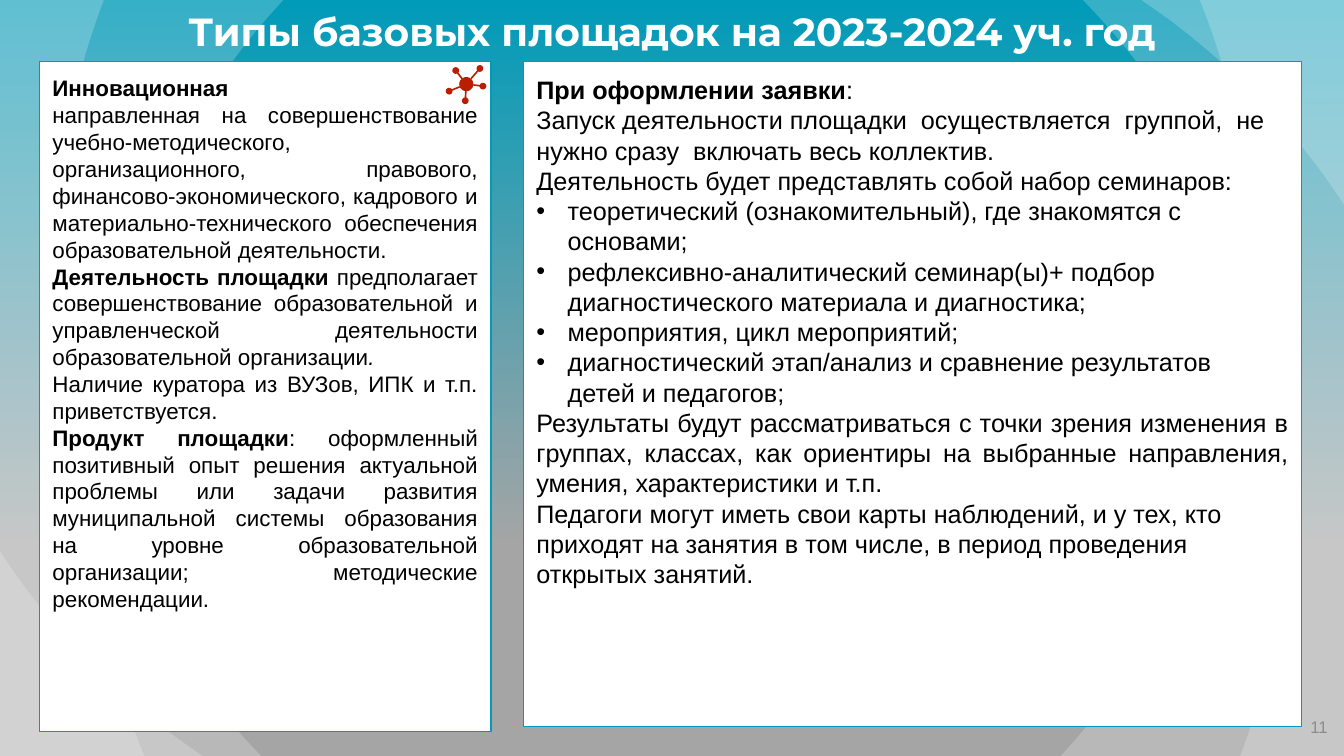
import math

import pptx
import pptx.dml.color
import pptx.enum.shapes
import pptx.enum.text
import pptx.oxml
import pptx.oxml.ns
import pptx.util

Inches = pptx.util.Inches
Pt = pptx.util.Pt
ALIGN = pptx.enum.text.PP_ALIGN
ANCHOR = pptx.enum.text.MSO_ANCHOR
SHAPE = pptx.enum.shapes.MSO_SHAPE
WIDTH, HEIGHT = 13.33, 7.5
TEAL, GREY, RED, WHITE, BLACK = "009BB9", "A5A5A5", "B91E00", "FFFFFF", "000000"
DRAWING = 'xmlns:a="http://schemas.openxmlformats.org/drawingml/2006/main"'


def color(value):
    return pptx.dml.color.RGBColor.from_string(value)


def draw_outline(shapes, points, fill):
    """Add a closed, filled polygon whose points are in inches."""
    units = [(round(x * 1000), round(y * 1000)) for x, y in points]
    builder = shapes.build_freeform(*units[0], scale=Inches(1) / 1000)
    builder.add_line_segments(units[1:], close=True)
    outline = builder.convert_to_shape()
    outline.shadow.inherit = False
    outline.line.fill.background()
    outline.fill.solid()
    outline.fill.fore_color.rgb = color(fill)
    return outline


deck = pptx.Presentation()
deck.slide_width, deck.slide_height = Inches(WIDTH), Inches(HEIGHT)
page = deck.slides.add_slide(deck.slide_layouts[5])

# Background gradient
backdrop = page.background.fill
backdrop.gradient()
backdrop.gradient_angle = 270
for stop, (position, shade) in zip(backdrop.gradient_stops, [(0, TEAL), (0.72, GREY)]):
    stop.position = position
    stop.color.rgb = color(shade)

# Translucent side waves: Bezier curves closed by slide corners, mirrored to the left side
right_corners = [(WIDTH, HEIGHT), (WIDTH, 0)]
waves = [
    ([[(11.9, 0), (12.24, 0.85), (12.42, 1.75), (12.41, 2.67)],
      [(12.41, 2.67), (12.41, 4.53), (11.7, 6.23), (10.52, 7.5)]], right_corners),
    ([[(10.74, 0), (11.99, 1.28), (12.77, 3.04), (12.77, 4.97)],
      [(12.77, 4.97), (12.77, 5.84), (12.61, 6.69), (12.3, 7.5)]], right_corners),
    ([[(11.32, 0), (12.12, 0.54), (12.81, 1.23), (13.33, 2.03)]], right_corners[1:]),
]
steps = 24
for mirrored in (False, True):
    for curves, corners in waves:
        points = []
        for curve in curves:
            for step in range(steps + 1):
                t = step / steps
                weights = [(1 - t) ** 3, 3 * t * (1 - t) ** 2, 3 * t * t * (1 - t), t ** 3]
                points.append(tuple(sum(w * p[axis] for w, p in zip(weights, curve))
                                    for axis in (0, 1)))
        points += corners
        if mirrored:
            points = [(WIDTH - x, HEIGHT - y) for x, y in points]
        wave = draw_outline(page.shapes, points, WHITE)
        tint = wave.element.spPr.find(".//" + pptx.oxml.ns.qn("a:srgbClr"))
        tint.append(pptx.oxml.parse_xml(f'<a:alpha {DRAWING} val="21000"/>'))

# Title, lifted above the waves, and page number
title = page.shapes.title
title.element.getparent().append(title.element)
title.left, title.top, title.width, title.height = map(Inches, (0.38, 0, 12.57, 0.68))
page_number = page.shapes.add_textbox(*map(Inches, (12.37, 6.93, 0.8, 0.57)))

# Two white panels
panels = []
for bounds in [(0.39, 0.61, 4.48, 6.65), (5.19, 0.61, 7.72, 6.6)]:
    panel = page.shapes.add_shape(SHAPE.RECTANGLE, *map(Inches, bounds))
    panel.shadow.inherit = False
    panel.fill.solid()
    panel.fill.fore_color.rgb = color(WHITE)
    panel.line.color.rgb = color(TEAL)
    panel.line.width = Pt(0.75)
    panels.append(panel)

# Paragraphs of each panel: kind and runs with their font overrides
bold = {"bold": True}
platform_text = [
    (ALIGN.LEFT, [("Инновационная", bold)]),
    (ALIGN.JUSTIFY, [("направленная на совершенствование учебно-методического, организационного, "
                      "правового, финансово-экономического, кадрового и материально-технического "
                      "обеспечения образовательной деятельности.", {})]),
    (ALIGN.JUSTIFY, [("Деятельность площадки ", bold),
                     ("предполагает совершенствование образовательной и управленческой "
                      "деятельности образовательной организации", {}),
                     (". ", {"italic": True})]),
    (ALIGN.JUSTIFY, [("Наличие куратора из ВУЗов, ИПК и т.п. приветствуется.", {})]),
    (ALIGN.JUSTIFY, [("Продукт площадки", bold),
                     (": оформленный позитивный опыт решения актуальной проблемы или задачи "
                      "развития муниципальной системы образования на уровне образовательной "
                      "организации; методические рекомендации.", {})]),
]
application_text = [
    (ALIGN.LEFT, [("При оформлении заявки", bold), (":", {})]),
    (ALIGN.LEFT, [("Запуск деятельности площадки  осуществляется  группой,  не нужно сразу  "
                   "включать весь коллектив.", {})]),
    (ALIGN.LEFT, [("Деятельность будет представлять собой набор семинаров:", {})]),
    ("bullet", [("теоретический (ознакомительный), где знакомятся с основами;", {})]),
    ("bullet", [("рефлексивно-аналитический семинар(ы)+ подбор диагностического материала "
                 "и диагностика;", {})]),
    ("bullet", [("мероприятия, цикл мероприятий;", {})]),
    ("bullet", [("диагностический этап/анализ и сравнение результатов  детей и педагогов;", {})]),
    (ALIGN.JUSTIFY, [("Результаты будут рассматриваться с точки зрения изменения в группах, "
                      "классах, как ориентиры на выбранные направления, умения, характеристики "
                      "и т.п. ", {})]),
    (ALIGN.LEFT, [("Педагоги могут иметь свои карты наблюдений, и у тех, кто приходят на занятия "
                   "в том числе, в период проведения открытых занятий.", {})]),
]

# Fill every text frame: box, paragraphs, margin, anchor, line spacing, font
texts = [
    (title, [(ALIGN.CENTER, [("Типы базовых площадок на 2023-2024 уч. год", bold)])],
     0, ANCHOR.MIDDLE, 0.9, {"name": "Montserrat", "size": Pt(28), "color": WHITE}),
    (page_number, [(ALIGN.RIGHT, [("11", {})])],
     0, ANCHOR.MIDDLE, 1.0, {"size": Pt(12), "color": "8C8C8C"}),
    (panels[0], platform_text, 0.13, ANCHOR.TOP, 1.0, {"size": Pt(16)}),
    (panels[1], application_text, 0.13, ANCHOR.TOP, 1.0, {"size": Pt(18)}),
]
for box, paragraphs, margin, anchor, spacing, font in texts:
    frame = box.text_frame
    layout = {"word_wrap": True, "vertical_anchor": anchor,
              "auto_size": pptx.enum.text.MSO_AUTO_SIZE.NONE}
    layout.update({f"margin_{side}": Inches(margin) for side in ("left", "top", "right", "bottom")})
    for name, value in layout.items():
        setattr(frame, name, value)
    for index, (kind, runs) in enumerate(paragraphs):
        para = frame.paragraphs[0] if index == 0 else frame.add_paragraph()
        para.alignment = ALIGN.LEFT if kind == "bullet" else kind
        para.line_spacing = spacing
        if kind == "bullet":
            properties = para._p.get_or_add_pPr()
            properties.set("marL", str(Inches(0.31)))
            properties.set("indent", str(Inches(-0.31)))
            properties.append(pptx.oxml.parse_xml(f'<a:buFont {DRAWING} typeface="Arial"/>'))
            properties.append(pptx.oxml.parse_xml(f'<a:buChar {DRAWING} char="•"/>'))
        for text, overrides in runs:
            span = para.add_run()
            span.text = text
            values = {"name": "Arial", "bold": False, "color": BLACK, **font, **overrides}
            span.font.color.rgb = color(values.pop("color"))
            for name, value in values.items():
                setattr(span.font, name, value)

# Network icon above the left panel: a hub and five satellites, each with its spoke
hub_x, hub_y, hub_radius = 4.625, 0.835, 0.07
satellite_radius, spoke_half_width = 0.033, 0.008
icon = page.shapes.add_group_shape()
for x, y in [(4.76, 0.68), (4.52, 0.7), (4.455, 0.905), (4.615, 1.0), (4.79, 0.855)]:
    angle = math.atan2(hub_y - y, hub_x - x)
    reach = math.hypot(hub_x - x, hub_y - y) - hub_radius
    opening = math.asin(spoke_half_width / satellite_radius)
    turns = [angle + opening + (2 * math.pi - 2 * opening) * step / steps
             for step in range(steps + 1)]
    outline = [(x + satellite_radius * math.cos(turn), y + satellite_radius * math.sin(turn))
               for turn in turns]
    outline += [(x + reach * math.cos(angle) - side * math.sin(angle),
                 y + reach * math.sin(angle) + side * math.cos(angle))
                for side in (-spoke_half_width, spoke_half_width)]
    draw_outline(icon.shapes, outline, RED)
draw_outline(icon.shapes, [(hub_x + hub_radius * math.cos(2 * math.pi * step / steps),
                            hub_y + hub_radius * math.sin(2 * math.pi * step / steps))
                           for step in range(steps)], RED)

deck.save("out.pptx")
